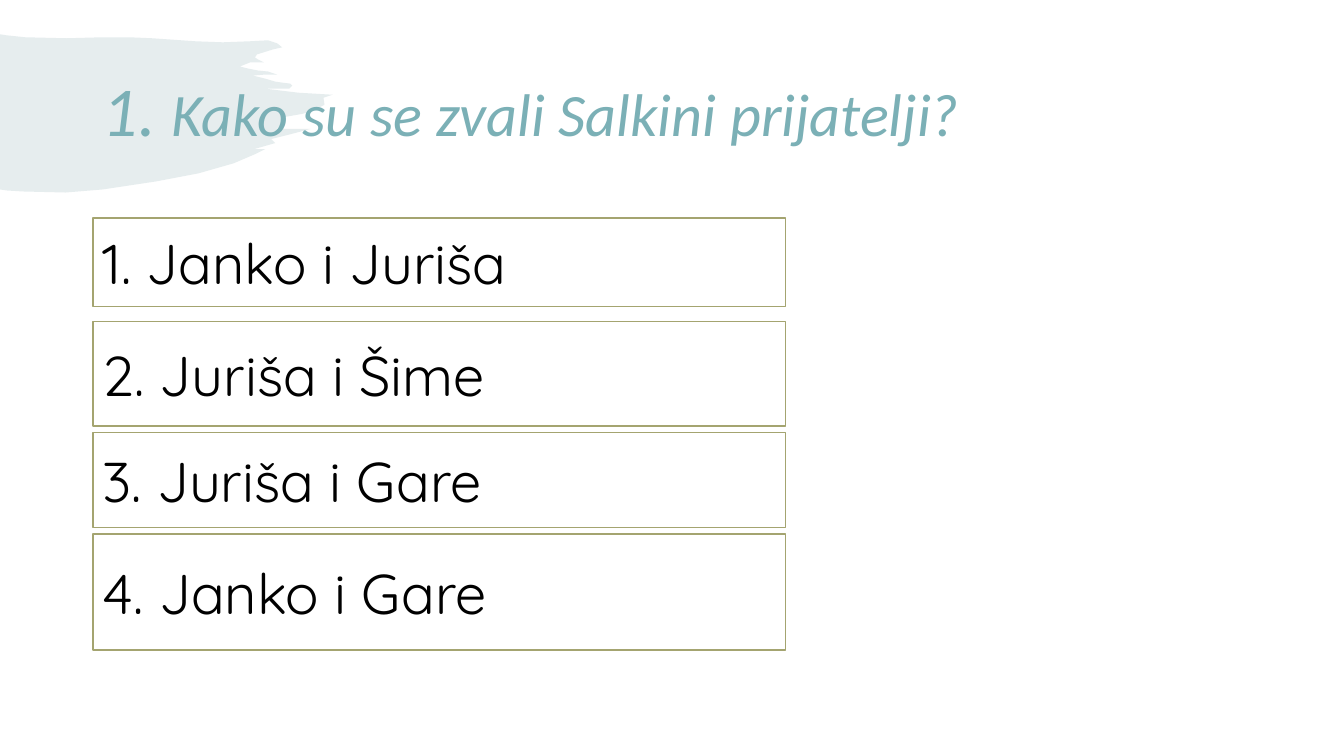
import lxml.etree
import pptx
import pptx.dml.color
import pptx.enum.shapes
import pptx.enum.text
import pptx.oxml.ns
import pptx.util

Cm = pptx.util.Cm
Pt = pptx.util.Pt

COLOURS = {
    "brush": "82A8AB",
    "title": "7BB0B6",
    "answer": "000000",
    "box": "FFFFFF",
    "border": "A4A470",
}

# Outline of the brush stroke, in units of BRUSH_UNIT
BRUSH_UNIT = Cm(0.0254)
BRUSH_OUTLINE = [
    (0, 34), (6, 35), (25, 37), (66, 38), (102, 37), (128, 36.7), (151, 38),
    (194, 41), (221, 42), (248, 41), (266, 40.5), (275, 43), (280, 47),
    (271, 49), (255, 54), (253, 57), (256, 59), (262, 62), (248, 62),
    (238, 66), (246, 68), (256, 70), (266, 71), (275, 74), (263, 74),
    (251, 75), (263, 78), (273, 81), (280, 82), (288, 83), (290, 85),
    (287, 88), (284, 88), (263, 88), (296, 92.5), (330, 94), (321, 97),
    (322, 104), (318, 106), (307, 111), (300, 113), (283, 116), (280, 120),
    (278, 125), (274, 128), (308, 128), (289, 133), (269, 138), (273, 142),
    (252, 148), (263, 148), (253, 153), (232, 161.5), (197, 172), (155, 180),
    (102, 188), (65, 191), (23, 190), (7, 189), (0, 188),
]

ANSWER_LEFT, ANSWER_WIDTH = 2.34, 17.45
# Text, top and height in centimetres, space before in points
ANSWERS = [
    ("1. Janko i Juriša", 5.49, 2.24, 0),
    ("2. Juriša i Šime", 8.1, 2.64, 0),
    ("3. Juriša i Gare", 10.9, 2.39, 0),
    ("4. Janko i Gare", 13.46, 2.92, 10),
]


def colour(name):
    return pptx.dml.color.RGBColor.from_string(COLOURS[name])


def add_span(para, text, font, size, colour_name, italic=False):
    span = para.add_run()
    span.text = text
    span.font.name = font
    span.font.size = Pt(size)
    span.font.italic = italic
    span.font.color.rgb = colour(colour_name)


def prepare_text(box):
    """Wrap and centre the text vertically; return its first paragraph."""
    frame = box.text_frame
    frame.word_wrap = True
    frame.vertical_anchor = pptx.enum.text.MSO_ANCHOR.MIDDLE
    para = frame.paragraphs[0]
    para.alignment = pptx.enum.text.PP_ALIGN.LEFT
    return para


def add_brush_stroke(page):
    builder = page.shapes.build_freeform(*BRUSH_OUTLINE[0], scale=BRUSH_UNIT)
    builder.add_line_segments(BRUSH_OUTLINE[1:], close=True)
    stroke = builder.convert_to_shape()
    stroke.shadow.inherit = False
    stroke.line.fill.background()
    stroke.fill.solid()
    stroke.fill.fore_color.rgb = colour("brush")
    tint = stroke.fill._xPr.find(".//" + pptx.oxml.ns.qn("a:srgbClr"))
    lxml.etree.SubElement(tint, pptx.oxml.ns.qn("a:alpha"), val="20000")


def add_title(page):
    box = page.shapes.add_textbox(Cm(2.34), Cm(1.02), Cm(29.21), Cm(3.68))
    para = prepare_text(box)
    para.line_spacing = 0.9
    add_span(para, "1. ", "Calibri", 50, "title", italic=True)
    add_span(para, "Kako su se zvali Salkini prijatelji?", "Calibri", 43,
             "title", italic=True)


def add_answer(page, text, top, height, space_before):
    box = page.shapes.add_shape(
        pptx.enum.shapes.MSO_SHAPE.ACTION_BUTTON_CUSTOM,
        Cm(ANSWER_LEFT), Cm(top), Cm(ANSWER_WIDTH), Cm(height))
    box.shadow.inherit = False
    box.fill.solid()
    box.fill.fore_color.rgb = colour("box")
    box.line.color.rgb = colour("border")
    box.line.width = Pt(1)
    para = prepare_text(box)
    para.space_before = Pt(space_before)
    add_span(para, text, "Quicksand", 40, "answer")


def main():
    deck = pptx.Presentation()
    deck.slide_width, deck.slide_height = Cm(33.87), Cm(19.05)
    page = deck.slides.add_slide(deck.slide_layouts[6])
    add_brush_stroke(page)
    add_title(page)
    for answer in ANSWERS:
        add_answer(page, *answer)
    deck.save("out.pptx")


if __name__ == "__main__":
    main()
